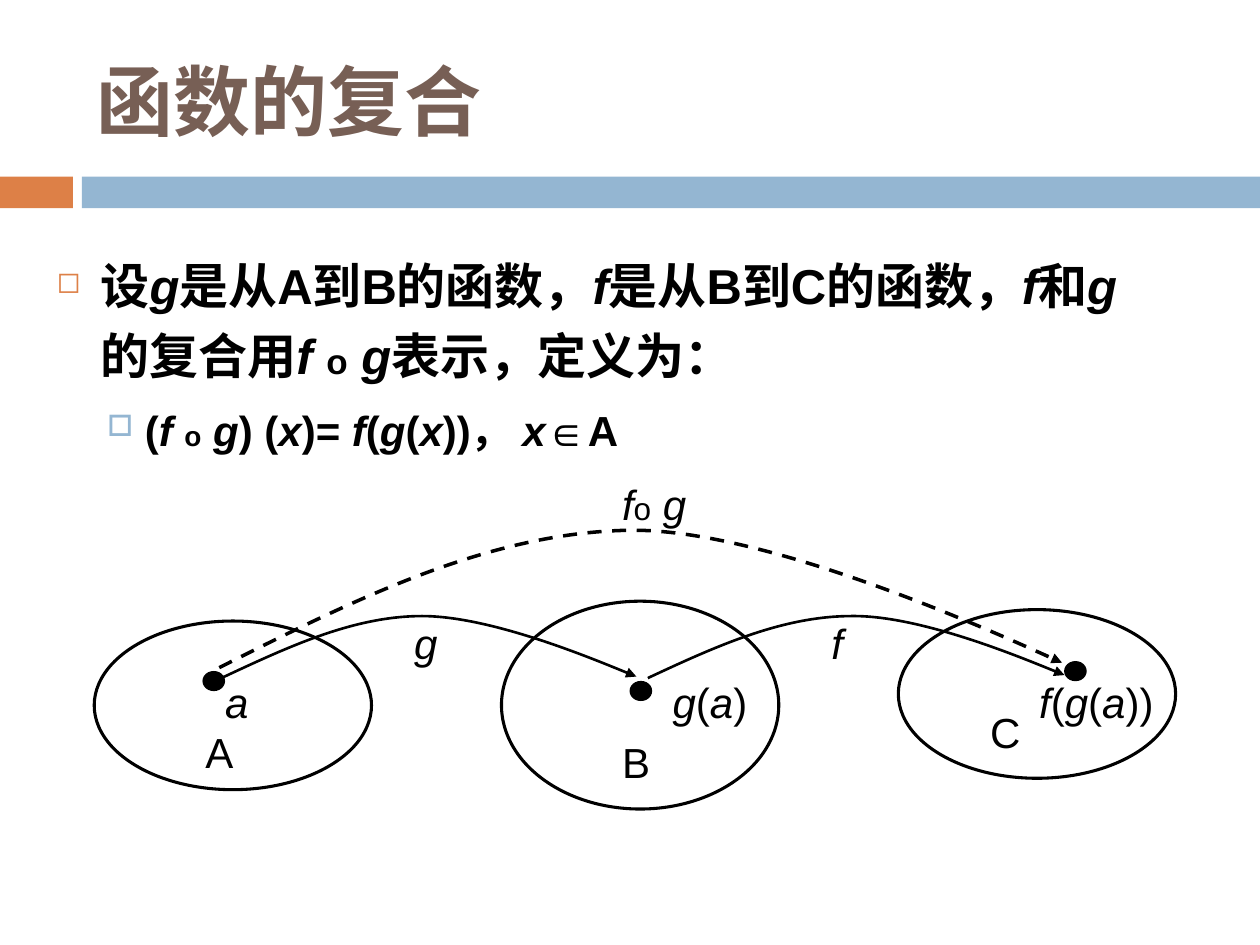
from dataclasses import dataclass
from itertools import groupby
from typing import NamedTuple, Optional

from lxml.etree import SubElement
from pptx import Presentation
from pptx.dml.color import RGBColor as RGB
from pptx.enum.dml import MSO_LINE as Dash
from pptx.enum.lang import MSO_LANGUAGE_ID as Lang
from pptx.enum.shapes import MSO_SHAPE as Shape
from pptx.enum.text import MSO_ANCHOR as Anchor, PP_ALIGN as Align
from pptx.oxml.ns import qn
from pptx.util import Cm, Pt


@dataclass(frozen=True)
class Theme:
    font: str = "Arial"
    ink: RGB = RGB(0, 0, 0)
    title: RGB = RGB(0x77, 0x5F, 0x55)
    orange: RGB = RGB(0xDD, 0x80, 0x47)
    blue: RGB = RGB(0x94, 0xB6, 0xD2)
    title_size: float = 44
    body_size: float = 28
    sub_size: float = 24
    label_size: float = 24


THEME = Theme()


class Box(NamedTuple):
    left: float
    top: float
    width: float
    height: float


class Bullet(NamedTuple):
    char: str
    color: RGB
    percent: int
    margin: float
    hang: float
    before: float


class Item(NamedTuple):
    text: str
    size: float
    ring_size: float
    bullet: Bullet


class Label(NamedTuple):
    text: str
    left: float
    top: float
    width: float = 1.19


class Curve(NamedTuple):
    points: list
    width: float
    dash: Optional[Dash] = None


BARS = [
    (Box(0, 3.56, 1.47, 0.64), THEME.orange),
    (Box(1.65, 3.56, 23.75, 0.64), THEME.blue),
]
ITEMS = [
    Item("设_g_是从A到B的函数，_f_是从B到C的函数，_f_和_g_的复合用_f _ο _g_表示，定义为：",
         THEME.body_size, 20, Bullet("◻", THEME.orange, 60, 0.89, 0.89, 7)),
    Item("(_f _ο _g_) (_x_)=_ f_(_g_(_x_))， _x_∈A",
         THEME.sub_size, 16, Bullet("□", THEME.blue, 70, 1.78, 0.76, 5.5)),
]
SETS = [
    Box(1.9, 12.52, 5.59, 3.4),
    Box(10.11, 12.12, 5.59, 4.19),
    Box(18.11, 12.29, 5.59, 3.4),
]
CURVES = [
    Curve([(4.42, 13.69), (5.77, 13.06), (7.11, 12.42), (8.51, 12.42),
           (9.93, 12.42), (12.83, 13.64), (12.83, 13.64)], 1.5),
    Curve([(13.06, 13.67), (14.43, 13.03), (15.77, 12.42), (17.17, 12.42),
           (18.57, 12.4), (21.46, 13.61), (21.46, 13.61)], 1.5),
    Curve([(4.42, 13.46), (7.14, 12.09), (9.88, 10.72), (12.73, 10.69),
           (15.54, 10.67), (21.41, 13.36), (21.41, 13.36)], 2, Dash.DASH),
]
DOT_WIDTH, DOT_HEIGHT = 0.43, 0.38
DOT_CENTERS = [(4.31, 13.73), (21.68, 13.53), (12.92, 13.93)]
LABEL_HEIGHT = 1.4
LABELS = [
    Label("_a_", 4.29, 13.51),
    Label("A", 3.89, 14.53),
    Label("_g_(_a_)", 13.31, 13.51, 2.21),
    Label("B", 12.29, 14.73),
    Label("C", 19.71, 14.12),
    Label("_f_(_g_(_a_))", 20.7, 13.51, 3.2),
    Label("_g_", 8.1, 12.32, 2.21),
    Label("_f_", 16.51, 12.32, 2.21),
    Label("_f_ο _g_", 12.29, 9.53, 2.21),
]


def add_shape(slide, kind: Shape, box: Box, fill: Optional[RGB] = None,
              line: Optional[float] = None):
    sp = slide.shapes.add_shape(kind, *map(Cm, box))
    sp.shadow.inherit = False
    if fill is None:
        sp.fill.background()
    else:
        sp.fill.solid()
        sp.fill.fore_color.rgb = fill
    if line is None:
        sp.line.fill.background()
    else:
        sp.line.color.rgb = THEME.ink
        sp.line.width = Pt(line)
    return sp


def add_text(slide, box: Box):
    tf = slide.shapes.add_textbox(*map(Cm, box)).text_frame
    tf.word_wrap = True
    return tf


def write_runs(p, text: str, size: float, ring_size: float,
               color: RGB = THEME.ink, bold: bool = False) -> None:
    for index, part in enumerate(text.split("_")):
        for is_ring, chars in groupby(part, lambda char: char == "ο"):
            r = p.add_run()
            r.text = "".join(chars)
            r.font.name = THEME.font
            r.font.size = Pt(ring_size if is_ring else size)
            r.font.color.rgb = color
            r.font.bold = bold
            r.font.italic = index % 2 == 1
            r.font.language_id = Lang.SIMPLIFIED_CHINESE


def set_bullet(p, bullet: Bullet) -> None:
    p.line_spacing = 1.2
    p.space_before = Pt(bullet.before)
    pPr = p._p.get_or_add_pPr()
    pPr.set("marL", str(Cm(bullet.margin)))
    pPr.set("indent", str(-Cm(bullet.hang)))
    color = SubElement(pPr, qn("a:buClr"))
    SubElement(color, qn("a:srgbClr"), val=str(bullet.color))
    SubElement(pPr, qn("a:buSzPct"), val=str(bullet.percent * 1000))
    SubElement(pPr, qn("a:buChar"), char=bullet.char)


def add_curve(slide, curve: Curve) -> None:
    start, *rest = [(Cm(x), Cm(y)) for x, y in curve.points]
    builder = slide.shapes.build_freeform(*start)
    builder.add_line_segments(rest, close=False)
    sp = builder.convert_to_shape()
    sp.shadow.inherit = False
    sp.fill.background()
    sp.line.color.rgb = THEME.ink
    sp.line.width = Pt(curve.width)
    if curve.dash is not None:
        sp.line.dash_style = curve.dash
    SubElement(sp.line._get_or_add_ln(), qn("a:tailEnd"), type="triangle")

    segments = list(sp._element.iter(qn("a:lnTo")))
    outline = segments[0].getparent()
    for i in range(0, len(segments), 3):
        bezier = SubElement(outline, qn("a:cubicBezTo"))
        for segment in segments[i:i + 3]:
            bezier.append(segment[0])
            outline.remove(segment)


def main() -> None:
    prs = Presentation()
    prs.slide_width, prs.slide_height = Cm(25.4), Cm(19.05)
    s = prs.slides.add_slide(prs.slide_layouts[6])

    for box, color in BARS:
        add_shape(s, Shape.RECTANGLE, box, fill=color)

    tf = add_text(s, Box(1.7, 0.64, 22.66, 2.74))
    tf.vertical_anchor = Anchor.MIDDLE
    write_runs(tf.paragraphs[0], "函数的复合", THEME.title_size, THEME.title_size,
               THEME.title, bold=True)

    tf = add_text(s, Box(0.89, 4.78, 22.81, 5.16))
    for i, item in enumerate(ITEMS):
        p = tf.add_paragraph() if i else tf.paragraphs[0]
        p.level = i
        set_bullet(p, item.bullet)
        write_runs(p, item.text, item.size, item.ring_size, bold=True)

    for box in SETS:
        add_shape(s, Shape.OVAL, box, line=1.75)
    for curve in CURVES:
        add_curve(s, curve)
    for x, y in DOT_CENTERS:
        box = Box(x - DOT_WIDTH / 2, y - DOT_HEIGHT / 2, DOT_WIDTH, DOT_HEIGHT)
        add_shape(s, Shape.FLOWCHART_CONNECTOR, box, fill=THEME.ink, line=0.75)
    for label in LABELS:
        tf = add_text(s, Box(label.left, label.top, label.width, LABEL_HEIGHT))
        p = tf.paragraphs[0]
        p.alignment = Align.JUSTIFY
        write_runs(p, label.text, THEME.label_size, 18)

    prs.save("out.pptx")


if __name__ == "__main__":
    main()
